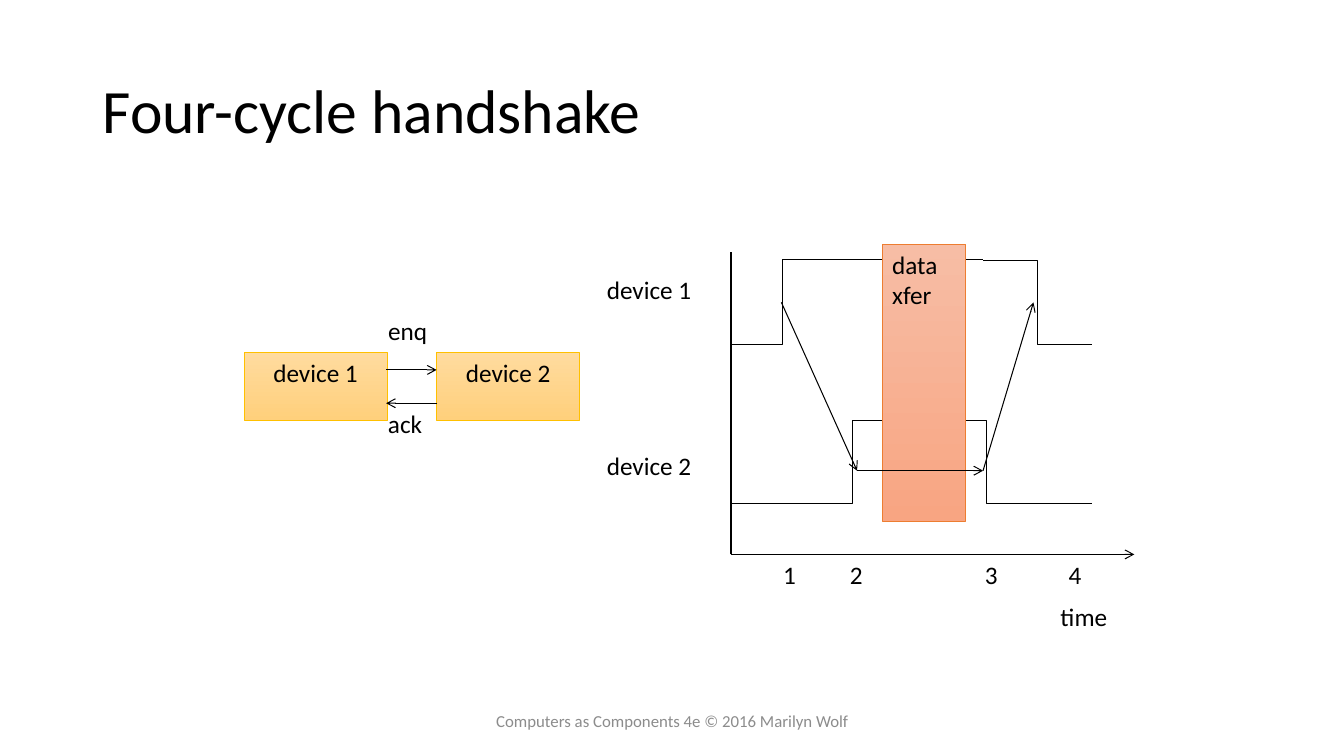
from dataclasses import dataclass
from typing import Optional

from lxml import etree
from pptx import Presentation
from pptx import util as u
from pptx.dml.color import RGBColor
from pptx.enum import shapes, text
from pptx.oxml import ns


@dataclass(frozen=True)
class Theme:
    font: str = "Calibri"
    ink: str = "000000"
    gray: str = "8C8C8C"
    gold: tuple = ("FFDB9E", "FFD07C", "FFC000")  # top, bottom, edge
    coral: tuple = ("F7BDA5", "F8A582", "ED7D31")
    title: int = 44
    body: int = 18
    foot: int = 12
    wire: float = 0.75
    edge: float = 0.5


T = Theme()
LEFT, MID = text.PP_ALIGN.LEFT, text.PP_ALIGN.CENTER


@dataclass(frozen=True)
class Label:
    words: str
    x: float
    y: float
    w: float
    h: float = 0.4
    size: int = T.body
    color: str = T.ink
    align: text.PP_ALIGN = LEFT
    anchor: text.MSO_ANCHOR = text.MSO_ANCHOR.TOP
    wrap: bool = False
    space: float = 1.0


@dataclass(frozen=True)
class Box:
    words: str
    x: float
    y: float
    w: float
    h: float
    tones: tuple
    align: text.PP_ALIGN


@dataclass(frozen=True)
class Wire:
    x1: float
    y1: float
    x2: float
    y2: float
    arrow: bool = True
    bend: Optional[float] = None  # share of the width before the step


def style(frame, words: str, size: int, color: str, align) -> None:
    frame.text = words
    par = frame.paragraphs[0]
    par.alignment = align
    par.font.name, par.font.size = T.font, u.Pt(size)
    par.font.color.rgb = RGBColor.from_string(color)


def put_label(slide, item: Label) -> None:
    shape = slide.shapes.add_textbox(*map(u.Inches, (item.x, item.y, item.w, item.h)))
    frame = shape.text_frame
    frame.word_wrap = item.wrap
    frame.vertical_anchor = item.anchor
    style(frame, item.words, item.size, item.color, item.align)
    frame.paragraphs[0].line_spacing = item.space


def put_box(slide, item: Box) -> None:
    shape = slide.shapes.add_shape(
        shapes.MSO_SHAPE.RECTANGLE, *map(u.Inches, (item.x, item.y, item.w, item.h)))
    shape.shadow.inherit = False
    top, base, edge = map(RGBColor.from_string, item.tones)
    shape.fill.gradient()
    shape.fill.gradient_angle = 270
    for stop, tone in zip(shape.fill.gradient_stops, (top, base)):
        stop.color.rgb = tone
    shape.line.color.rgb, shape.line.width = edge, u.Pt(T.edge)
    frame = shape.text_frame
    frame.word_wrap = True
    frame.vertical_anchor = text.MSO_ANCHOR.TOP
    style(frame, item.words, T.body, T.ink, item.align)


def put_wire(slide, item: Wire) -> None:
    kind = shapes.MSO_CONNECTOR
    wire = slide.shapes.add_connector(
        kind.STRAIGHT if item.bend is None else kind.ELBOW,
        *map(u.Inches, (item.x1, item.y1, item.x2, item.y2)))
    wire.line.color.rgb = RGBColor.from_string(T.ink)
    wire.line.width = u.Pt(T.wire)
    props = wire.element.spPr
    if item.arrow:
        etree.SubElement(props.find(ns.qn("a:ln")), ns.qn("a:tailEnd"), type="arrow")
    if item.bend is not None:
        guides = props.find(ns.qn("a:prstGeom")).get_or_add_avLst()
        etree.SubElement(guides, ns.qn("a:gd"), name="adj1",
                         fmla=f"val {round(item.bend * 100000)}")
    etree.SubElement(props, ns.qn("a:effectLst"))


def main() -> None:
    deck = Presentation()
    deck.slide_width, deck.slide_height = u.Inches(13.33), u.Inches(7.5)
    slide = deck.slides.add_slide(deck.slide_layouts[6])
    names = ("device 1", "device 2")

    # Title and footer
    center = text.MSO_ANCHOR.MIDDLE
    put_label(slide, Label("Four-cycle handshake", 0.92, 0.4, 11.5, 1.45, T.title,
                           anchor=center, wrap=True, space=0.9))
    put_label(slide, Label("Computers as Components 4e © 2016 Marilyn Wolf",
                           4.42, 6.95, 4.5, size=T.foot, color=T.gray,
                           align=MID, anchor=center, wrap=True))

    # Two devices and their signals
    for name, x in zip(names, (2.42, 4.33)):
        put_box(slide, Box(name, x, 3.5, 1.42, 0.67, T.gold, MID))
    put_wire(slide, Wire(3.83, 3.67, 4.33, 3.67))
    put_wire(slide, Wire(4.33, 4, 3.83, 4))
    put_label(slide, Label("enq", 3.75, 3.08, 0.59))
    put_label(slide, Label("ack", 3.75, 4, 0.54))

    # Axes of the timing chart
    left, base, end = 7.25, 5.5, 10.83
    put_wire(slide, Wire(left, base, 11.25, base))
    put_wire(slide, Wire(left, base, left, 2.5, arrow=False))
    put_label(slide, Label("time", 10.42, 5.92, 0.67))
    for name, y in zip(names, (2.67, 4.42)):
        put_label(slide, Label(name, 5.92, y, 1.05))

    # Signal levels: each rises, then falls
    for high, low, start, fall, rise in ((2.58, 3.42, 9.75, 0.5, 0.205),
                                         (4.17, 5, 9.25, 0.34, 0.484)):
        put_wire(slide, Wire(start, high, end, low, False, fall))
        put_wire(slide, Wire(left, low, 9.75, high, False, rise))

    # Data transfer
    put_box(slide, Box("data xfer", 8.75, 2.42, 0.83, 2.75, T.coral, LEFT))

    # Order of events
    events = ((7.75, 3), (8.5, 4.67), (9.75, 4.67), (10.25, 3))
    for a, b in zip(events, events[1:]):
        put_wire(slide, Wire(*a, *b))
    for step, x in enumerate((7.67, 8.33, 9.67, 10.5), 1):
        put_label(slide, Label(str(step), x, base, 0.33))

    deck.save("out.pptx")


if __name__ == "__main__":
    main()
